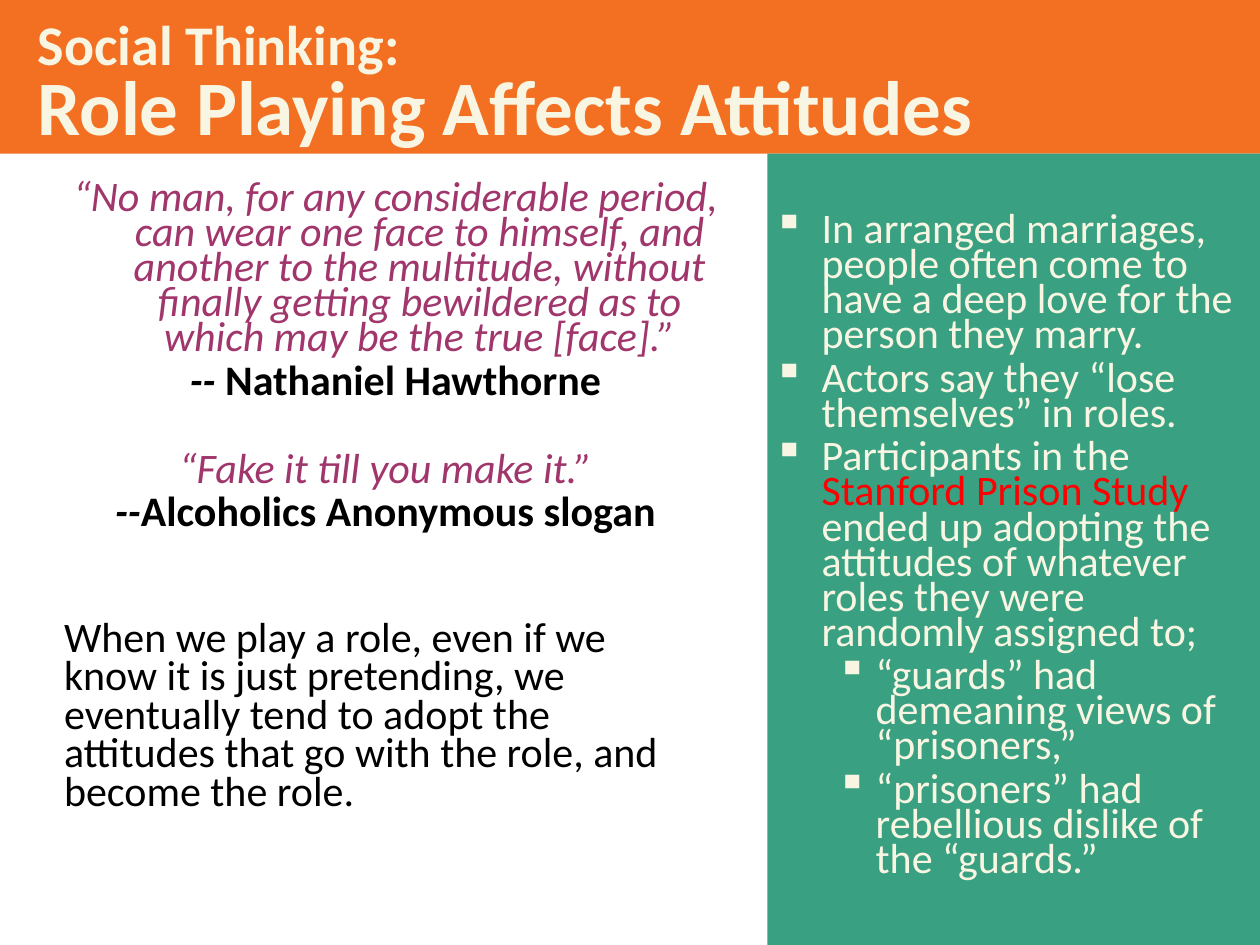
from lxml.etree import SubElement
from pptx import Presentation
from pptx.dml.color import RGBColor
from pptx.enum.shapes import MSO_SHAPE
from pptx.enum.text import MSO_ANCHOR, PP_ALIGN
from pptx.oxml.ns import qn
from pptx.util import Pt

SCALE = 9144
CREAM, ORANGE, GREEN = "F8F6E3", "F36F21", "3AA082"
PLUM, RED, BLACK = "A0366C", "FF0000", "000000"


def px(n):
    """Turn px, 100 to the inch, into EMU."""
    return n * SCALE


def color(value):
    """Turn a hex string into a colour."""
    return RGBColor.from_string(value)


def set_frame(s, margins, anchor=MSO_ANCHOR.TOP):
    """Set wrapping, anchor and left, top, right, bottom margins."""
    tf = s.text_frame
    tf.word_wrap = True
    tf.vertical_anchor = anchor
    for side, n in zip(("left", "top", "right", "bottom"), margins):
        setattr(tf, f"margin_{side}", px(n))
    return tf


def add_panel(slide, box, fill, margins):
    """Add a filled rectangle and return its text frame."""
    s = slide.shapes.add_shape(MSO_SHAPE.RECTANGLE, *map(px, box))
    s.shadow.inherit = False
    s.fill.solid()
    s.fill.fore_color.rgb = color(fill)
    s.line.fill.background()
    return set_frame(s, margins, MSO_ANCHOR.MIDDLE)


def add_text(slide, box, margins):
    """Add a text box and return its text frame."""
    return set_frame(slide.shapes.add_textbox(*map(px, box)), margins)


def add_paragraph(tf, spacing, before=0, align=PP_ALIGN.LEFT, bullet=None, **indents):
    """Start a paragraph, reusing the first one while it is empty."""
    first = tf.paragraphs[0]
    p = tf.add_paragraph() if first.runs else first
    formats = {"line_spacing": Pt(spacing), "alignment": align,
               "space_before": Pt(before if first.runs else 0)}
    for name, value in formats.items():
        setattr(p, name, value)
    pPr = p._p.get_or_add_pPr()
    for name, n in indents.items():
        pPr.set(name, str(px(n)))
    if bullet:
        SubElement(pPr, qn("a:buChar")).set("char", bullet)
    return p


def add_run(p, text, fill, size=24, **style):
    """Add a formatted run."""
    r = p.add_run()
    r.text = text
    for name, value in {"name": "Calibri", "size": Pt(size), **style}.items():
        setattr(r.font, name, value)
    r.font.color.rgb = color(fill)


def add_title(slide, box):
    """Add the title band with its two lines."""
    p = add_paragraph(add_panel(slide, box, ORANGE, (30, 5, 10, 5)), 42)
    add_run(p, "Social Thinking:", CREAM, 32, bold=True)
    p.add_line_break()
    add_run(p, "Role Playing Affects Attitudes", CREAM, 44, bold=True)


def add_quotes(slide, box):
    """Add the centred quotes, each followed by its source."""
    quotes = [
        ("“No man, for any considerable period, can wear one face to himself, "
         "and another to the multitude, without finally getting bewildered as "
         "to which may be the true [face].”", "-- ", "Nathaniel Hawthorne", 0),
        ("“Fake it till you make it.”", "--", "Alcoholics Anonymous slogan", 16),
    ]
    tf = add_text(slide, box, (0, 5, 0, 5))
    layout = {"align": PP_ALIGN.CENTER, "marL": 38, "indent": -38}
    for quote, dash, source, right in quotes:
        p = add_paragraph(tf, 20, 30, marR=right, **layout)
        add_run(p, quote, PLUM, italic=True)
        p = add_paragraph(tf, 20, 5, **layout)
        add_run(p, dash, BLACK, bold=True, italic=True)
        add_run(p, source, BLACK, bold=True)


def add_examples(slide, box):
    """Add the green panel with its two-level bullets."""
    levels = [{"marL": 38, "indent": -38}, {"marL": 81, "indent": -31}]
    examples = [
        (0, [("In arranged marriages, people often come to have a deep love "
              "for the person they marry.", CREAM)]),
        (0, [("Actors say they “lose themselves” in roles.", CREAM)]),
        (0, [("Participants in the ", CREAM), ("Stanford Prison Study ", RED),
             ("ended up adopting the attitudes of whatever roles they were "
              "randomly assigned to;", CREAM)]),
        (1, [("“guards” had demeaning views of “prisoners,”", CREAM)]),
        (1, [("“prisoners” had rebellious dislike of the “guards.”", CREAM)]),
    ]
    tf = add_panel(slide, box, GREEN, (5, 5, 5, 5))
    for level, parts in examples:
        p = add_paragraph(tf, 20, 5, bullet="▪", **levels[level])
        p.level = level
        for text, fill in parts:
            add_run(p, text, fill)


def add_summary(slide, box):
    """Add the closing statement."""
    p = add_paragraph(add_text(slide, box, (10, 5, 10, 5)), 22)
    add_run(p, "When we play a role, even if we know it is just pretending, we "
               "eventually tend to adopt the attitudes that go with the role, "
               "and become the role.", BLACK)


def main():
    """Build the slide and save it."""
    prs = Presentation()
    width, height, band, split = 1000, 750, 122, 609
    prs.slide_width, prs.slide_height = px(width), px(height)
    slide = prs.slides.add_slide(prs.slide_layouts[6])
    add_title(slide, (0, 0, width, band))
    add_quotes(slide, (50, 142, 528, 303))
    add_examples(slide, (split, band, width - split, height - band))
    add_summary(slide, (41, 489, 508, 164))
    prs.save("out.pptx")


if __name__ == "__main__":
    main()
